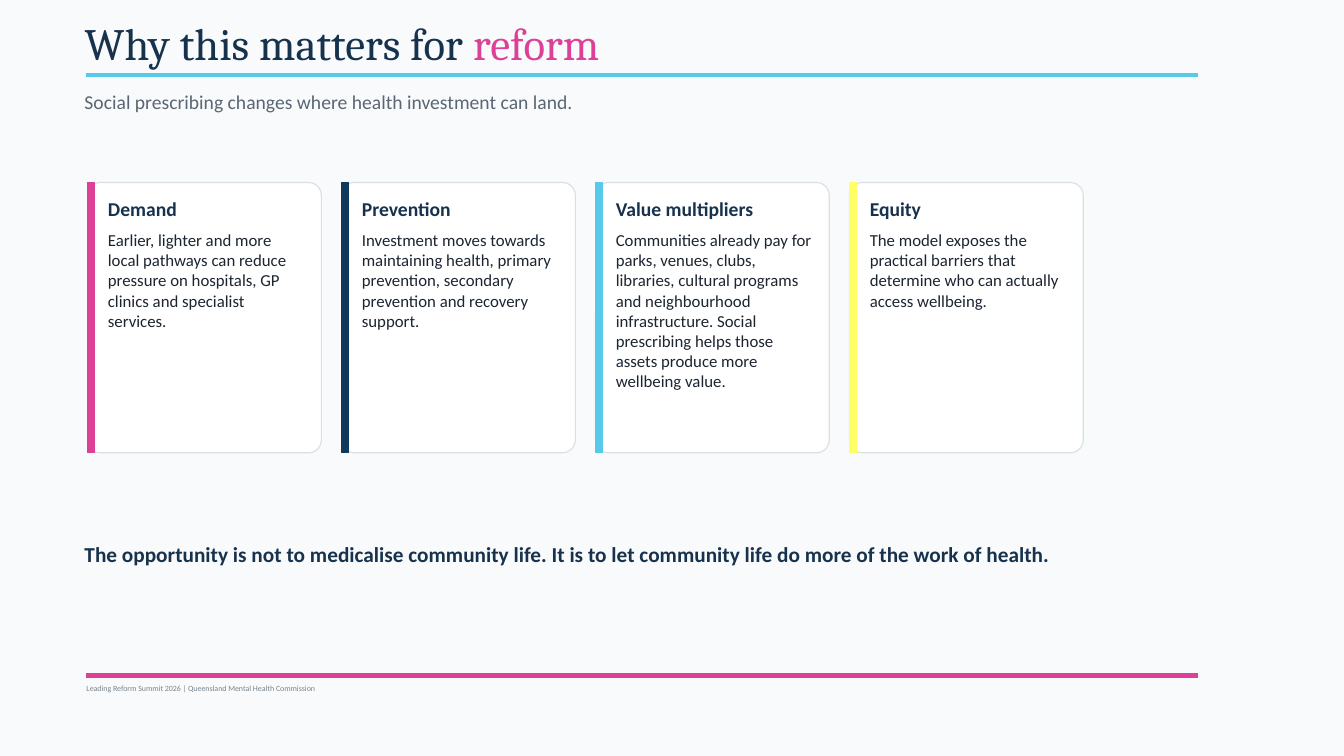
from pptx import Presentation
from pptx.dml.color import RGBColor
from pptx.enum.shapes import MSO_CONNECTOR, MSO_SHAPE as SHAPE
from pptx.enum.text import MSO_ANCHOR as ANCHOR, MSO_AUTO_SIZE, PP_ALIGN
from pptx.oxml.ns import qn
from pptx.util import Cm, Pt

BACKGROUND = RGBColor(0xF8, 0xFA, 0xFB)
WHITE = RGBColor(0xFF, 0xFF, 0xFF)
NAVY = RGBColor(0x17, 0x32, 0x4D)
DEEP_BLUE = RGBColor(0x0F, 0x3A, 0x5E)
INK = RGBColor(0x1C, 0x25, 0x30)
SLATE = RGBColor(0x5A, 0x66, 0x73)
GREY = RGBColor(0x7A, 0x85, 0x8E)
BORDER = RGBColor(0xD8, 0xE0, 0xE4)
PINK = RGBColor(0xDD, 0x41, 0x97)
CYAN = RGBColor(0x57, 0xC9, 0xE9)
YELLOW = RGBColor(0xFF, 0xFF, 0x66)

MARGIN = Cm(2.16)
RULE_WIDTH = Cm(28.02)
CARD_LEFT, CARD_TOP = Cm(2.21), Cm(4.6)
CARD_WIDTH, CARD_HEIGHT = Cm(5.89), Cm(6.81)
CARD_PITCH = Cm(6.4)

CARDS = [
    ("Demand", PINK,
     "Earlier, lighter and more local pathways can reduce pressure on "
     "hospitals, GP clinics and specialist services."),
    ("Prevention", DEEP_BLUE,
     "Investment moves towards maintaining health, primary prevention, "
     "secondary prevention and recovery support."),
    ("Value multipliers", CYAN,
     "Communities already pay for parks, venues, clubs, libraries, cultural "
     "programs and neighbourhood infrastructure. Social prescribing helps "
     "those assets produce more wellbeing value."),
    ("Equity", YELLOW,
     "The model exposes the practical barriers that determine who can "
     "actually access wellbeing."),
]


def style_run(r, font, size, color, bold=False):
    r.font.name = font
    r.font.size = Pt(size)
    r.font.color.rgb = color
    r.font.bold = bold


def add_text(slide, box, text, size, color, bold=False, anchor=ANCHOR.MIDDLE):
    """Add a wrapped text box without insets and return its paragraph."""
    tf = slide.shapes.add_textbox(*box).text_frame
    tf.word_wrap = True
    tf.vertical_anchor = anchor
    tf.margin_left = tf.margin_top = tf.margin_right = tf.margin_bottom = 0
    p = tf.paragraphs[0]
    p.text = text
    style_run(p.runs[0], "Calibri", size, color, bold)
    return p


def add_box(slide, kind, box, fill, line, line_width):
    sp = slide.shapes.add_shape(kind, *box)
    sp.shadow.inherit = False
    sp.fill.solid()
    sp.fill.fore_color.rgb = fill
    sp.line.color.rgb = line
    sp.line.width = Pt(line_width)
    return sp


def add_rule(slide, x, y, width, color):
    rule = slide.shapes.add_connector(MSO_CONNECTOR.STRAIGHT, x, y, x + width, y)
    rule.line.color.rgb = color
    rule.line.width = Pt(3)
    sp_pr = rule._element.spPr
    sp_pr.append(sp_pr.makeelement(qn("a:effectLst"), {}))


def add_header(slide, x, y, width):
    title = slide.shapes.title
    title.left, title.top = x - Cm(0.28), y
    title.width, title.height = Cm(27), Cm(1.35)
    tf = title.text_frame
    tf.auto_size = MSO_AUTO_SIZE.NONE
    tf.vertical_anchor = ANCHOR.TOP
    p = tf.paragraphs[0]
    p.text = "Why this matters for "
    p.alignment = PP_ALIGN.LEFT
    p.line_spacing = 0.9
    style_run(p.runs[0], "Cambria", 32, NAVY)
    r = p.add_run()
    r.text = "reform"
    style_run(r, "Cambria", 32, PINK)

    add_rule(slide, x, y + Cm(1.46), width, CYAN)
    add_text(slide, (x - Cm(0.03), y + Cm(1.75), Cm(26.06), Cm(0.74)),
             "Social prescribing changes where health investment can land.",
             14, SLATE)


def add_card(slide, x, y, width, height, heading, accent, body):
    card = add_box(slide, SHAPE.ROUNDED_RECTANGLE, (x, y, width, height),
                   WHITE, BORDER, 0.8)
    card.adjustments[0] = 0.055
    add_box(slide, SHAPE.RECTANGLE, (x, y, Cm(0.18), height), accent, accent, 1)
    text_x = x + Cm(0.51)
    add_text(slide, (text_x, y + Cm(0.33), width - Cm(0.84), Cm(0.66)),
             heading, 14, NAVY, bold=True)
    add_text(slide, (text_x, y + Cm(1.19), width - Cm(0.94), height - Cm(1.48)),
             body, 12, INK, anchor=ANCHOR.TOP)


def add_conclusion(slide, x, y, width, height):
    p = add_text(slide, (x, y, width, height),
                 "The opportunity is not to medicalise community life. It is to "
                 "let community life do more of the work of health.",
                 15.2, NAVY, bold=True)
    p.line_spacing = 0.8


def add_footer(slide, x, y, width):
    add_rule(slide, x, y, width, PINK)
    add_text(slide, (x + Cm(0.02), y + Cm(0.13), Cm(16.5), Cm(0.4)),
             "Leading Reform Summit 2026 | Queensland Mental Health Commission",
             5.7, GREY)


def main():
    prs = Presentation()
    prs.slide_width, prs.slide_height = Cm(33.87), Cm(19.05)
    slide = prs.slides.add_slide(prs.slide_layouts[5])
    slide.background.fill.solid()
    slide.background.fill.fore_color.rgb = BACKGROUND

    add_header(slide, MARGIN, Cm(0.43), RULE_WIDTH)
    for i, (heading, accent, body) in enumerate(CARDS):
        add_card(slide, CARD_LEFT + i * CARD_PITCH, CARD_TOP,
                 CARD_WIDTH, CARD_HEIGHT, heading, accent, body)
    add_conclusion(slide, MARGIN - Cm(0.03), Cm(13.44), Cm(26.21), Cm(1.14))
    add_footer(slide, MARGIN, Cm(17.02), RULE_WIDTH)
    prs.save("out.pptx")


if __name__ == "__main__":
    main()
